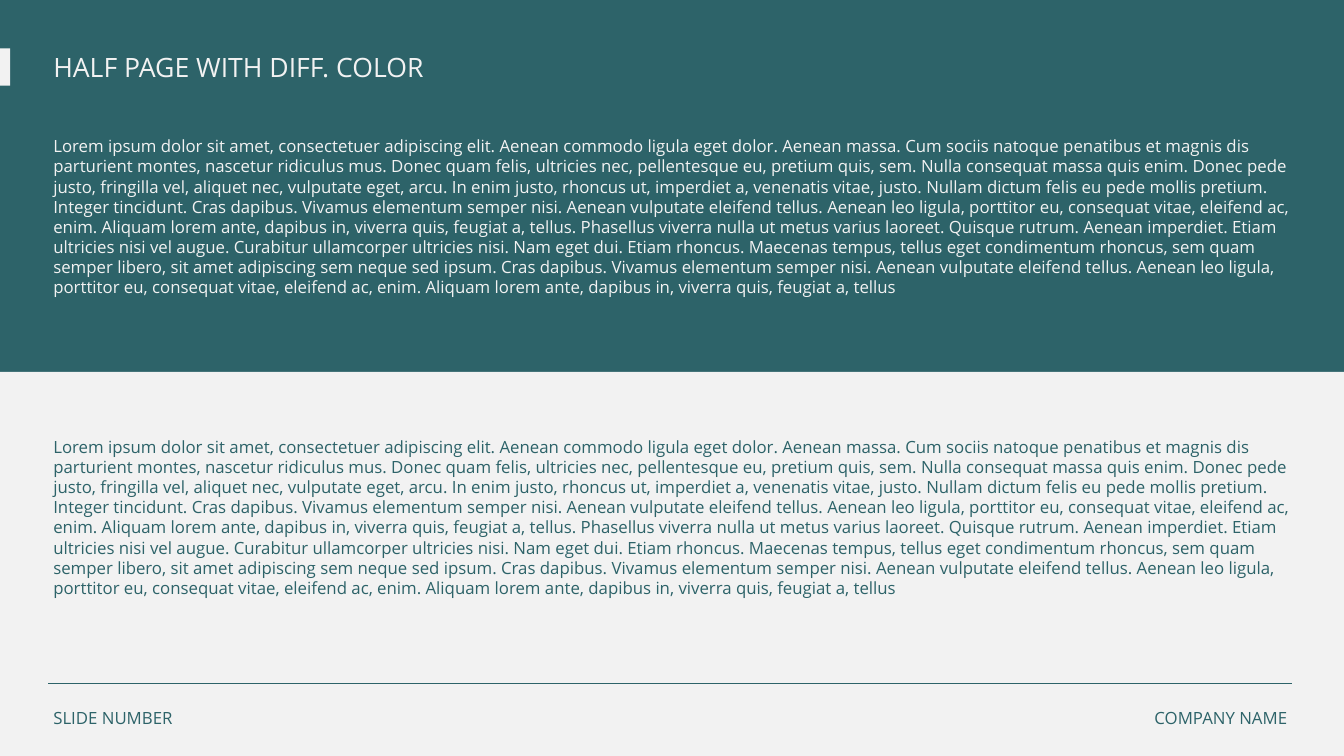
from pptx import Presentation
from pptx.dml.color import RGBColor
from pptx.enum.shapes import MSO_CONNECTOR, MSO_SHAPE
from pptx.enum.text import MSO_AUTO_SIZE, PP_ALIGN
from pptx.oxml.ns import qn
from pptx.util import Inches, Pt
from lxml.etree import SubElement

TEAL = RGBColor(0x2D, 0x63, 0x69)
PALE = RGBColor(0xF2, 0xF2, 0xF2)
WIDTH, HEIGHT = 26.67, 15
LEFT, RIGHT = 0.96, 25.64

# Body copy: the refrain closes both of its passages
OPENING = (
    "Lorem ipsum dolor sit amet, consectetuer adipiscing elit. Aenean commodo "
    "ligula eget dolor. Aenean massa. Cum sociis natoque penatibus et magnis dis "
    "parturient montes, nascetur ridiculus mus. Donec quam felis, ultricies nec, "
    "pellentesque eu, pretium quis, sem. Nulla consequat massa quis enim. Donec "
    "pede justo, fringilla vel, aliquet nec, vulputate eget, arcu. In enim justo, "
    "rhoncus ut, imperdiet a, venenatis vitae, justo. Nullam dictum felis eu pede "
    "mollis pretium. Integer tincidunt."
)
REFRAIN = (
    "Cras dapibus. Vivamus elementum semper nisi. Aenean vulputate eleifend "
    "tellus. Aenean leo ligula, porttitor eu, consequat vitae, eleifend ac, enim. "
    "Aliquam lorem ante, dapibus in, viverra quis, feugiat a, tellus"
)
MIDDLE = (
    "Phasellus viverra nulla ut metus varius laoreet. Quisque rutrum. Aenean "
    "imperdiet. Etiam ultricies nisi vel augue. Curabitur ullamcorper ultricies "
    "nisi. Nam eget dui. Etiam rhoncus. Maecenas tempus, tellus eget condimentum "
    "rhoncus, sem quam semper libero, sit amet adipiscing sem neque sed ipsum."
)
LOREM = " ".join((OPENING, REFRAIN + ".", MIDDLE, REFRAIN))


class Page:
    """Draws on one slide; lengths are shares of its width and height."""

    font = "Open Sans"
    size = 24

    def __init__(self, deck, back):
        self.wide, self.high = deck.slide_width, deck.slide_height
        self.slide = deck.slides.add_slide(deck.slide_layouts[6])
        fill = self.slide.background.fill
        fill.solid()
        fill.fore_color.rgb = back

    def place(self, x, y, w, h):
        return (round(x * self.wide), round(y * self.high),
                round(w * self.wide), round(h * self.high))

    def block(self, x, y, w, h, color):
        shape = self.slide.shapes.add_shape(
            MSO_SHAPE.RECTANGLE, *self.place(x, y, w, h))
        shape.shadow.inherit = False
        shape.fill.solid()
        shape.fill.fore_color.rgb = color
        shape.line.fill.background()

    def text(self, x, y, w, h, words, color, size=None, align=PP_ALIGN.LEFT):
        box = self.slide.shapes.add_textbox(*self.place(x, y, w, h))
        frame = box.text_frame
        frame.word_wrap = True
        frame.auto_size = MSO_AUTO_SIZE.SHAPE_TO_FIT_TEXT
        para = frame.paragraphs[0]
        para.alignment = align
        run = para.add_run()
        run.text = words
        run.font.name = self.font
        run.font.size = Pt(size or self.size)
        run.font.color.rgb = color

    def rule(self, x, y, w, color, weight):
        left, top, span, _ = self.place(x, y, w, 0)
        line = self.slide.shapes.add_connector(
            MSO_CONNECTOR.STRAIGHT, left, top, left + span, top)
        line.line.color.rgb = color
        line.line.width = Pt(weight)
        SubElement(line._element.spPr, qn("a:effectLst"))


def main():
    deck = Presentation()
    deck.slide_width, deck.slide_height = Inches(WIDTH), Inches(HEIGHT)
    page = Page(deck, TEAL)
    left, right = LEFT / WIDTH, RIGHT / WIDTH

    # Title with its edge marker
    top, tall = 0.96 / HEIGHT, 0.74 / HEIGHT
    page.block(0, top, 0.2 / WIDTH, tall, PALE)
    page.text(left, top, 10.27 / WIDTH, tall,
              "HALF PAGE WITH DIFF. COLOR", PALE, 38)

    # Pale lower half
    half = 7.38 / HEIGHT
    page.block(0, half, 1, 1 - half, PALE)

    # Footer
    foot, deep = 14 / HEIGHT, 0.5 / HEIGHT
    name = 3.1 / WIDTH
    page.text(left, foot, 2.8 / WIDTH, deep, "SLIDE NUMBER", TEAL)
    page.text(right - name, foot, name, deep, "COMPANY NAME", TEAL,
              align=PP_ALIGN.RIGHT)
    page.rule(left, 13.56 / HEIGHT, right - left, TEAL, 1.75)

    # The same copy on each half, in the opposite colour
    for y, color in ((2.65, PALE), (8.61, TEAL)):
        page.text(left, y / HEIGHT, 24.86 / WIDTH, 3.74 / HEIGHT, LOREM, color)

    deck.save("out.pptx")


if __name__ == "__main__":
    main()
